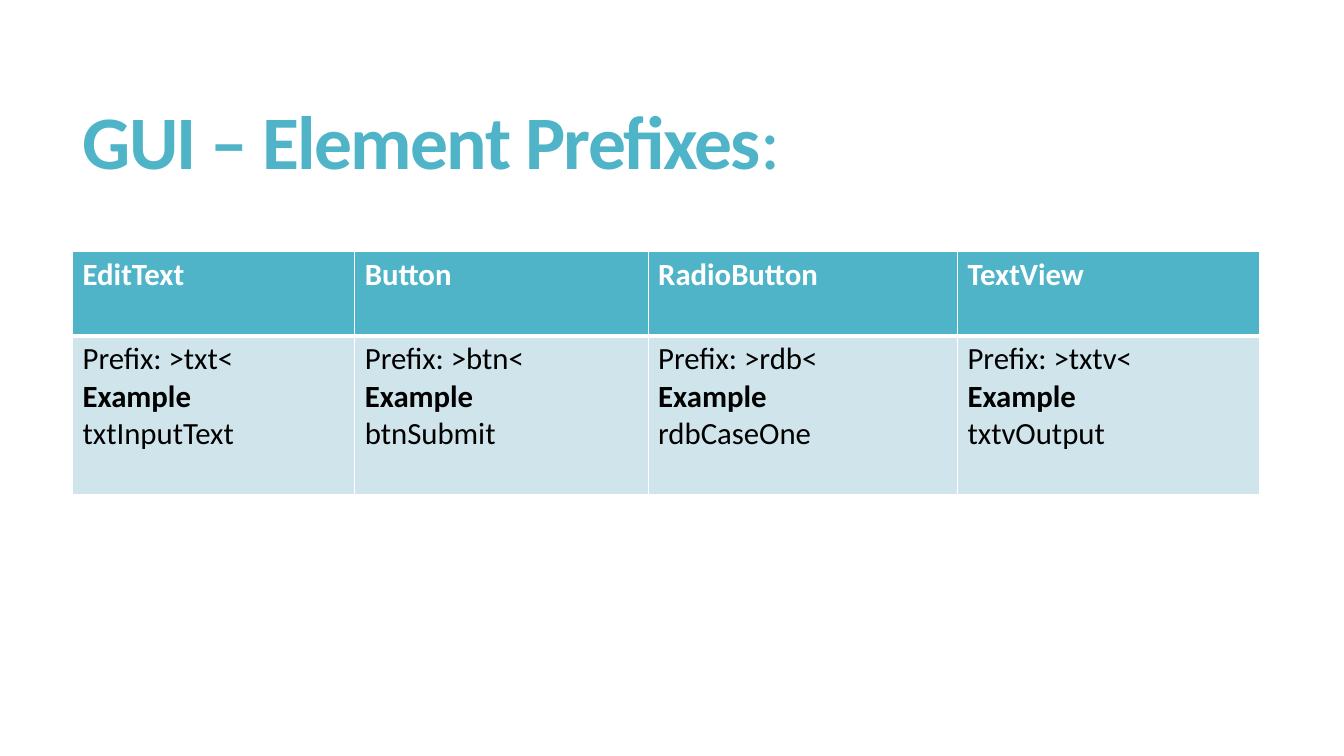
from dataclasses import dataclass

from lxml import etree
from pptx import Presentation
from pptx import util as u
from pptx.dml.color import RGBColor
from pptx.enum import text
from pptx.oxml.ns import qn

FONT = "Calibri"
TEAL = "50B4C8"
PALE = "D0E5EB"
WHITE = "FFFFFF"
BLACK = "000000"
LEFT, WIDTH = 51.84, 848.16
ROW_HEIGHTS = (60.5, 113.5)


@dataclass(frozen=True)
class Element:
    name: str
    prefix: str
    example: str
    width: float


ELEMENTS = (
    Element("EditText", "txt", "txtInputText", 201.6),
    Element("Button", "btn", "btnSubmit", 209.52),
    Element("RadioButton", "rdb", "rdbCaseOne", 221.04),
    Element("TextView", "txtv", "txtvOutput", 216),
)


def rgb(value: str) -> RGBColor:
    return RGBColor.from_string(value)


def set_font(font, size: float, color: str, bold: bool) -> None:
    font.name = FONT
    font.size = u.Pt(size)
    font.bold = bold
    font.color.rgb = rgb(color)


def add_title(slide) -> None:
    sp = slide.shapes.title
    sp.left, sp.top = u.Pt(LEFT), u.Pt(39.6)
    sp.width, sp.height = u.Pt(WIDTH), u.Pt(130.32)
    tf = sp.text_frame
    tf.word_wrap = True
    tf.auto_size = text.MSO_AUTO_SIZE.NONE
    tf.vertical_anchor = text.MSO_ANCHOR.MIDDLE
    p = tf.paragraphs[0]
    p.alignment = text.PP_ALIGN.LEFT
    p.line_spacing = 0.85
    for wording, bold in (("GUI – Element Prefixes", True), (":", False)):
        r = p.add_run()
        r.text = wording
        set_font(r.font, 54, TEAL, bold)
        r.font._element.set("spc", "-120")


def set_borders(cell, top: float, bottom: float) -> None:
    tc_pr = cell._tc.get_or_add_tcPr()
    for side, width in (("L", 1), ("R", 1), ("T", top), ("B", bottom)):
        line = etree.SubElement(tc_pr, qn(f"a:ln{side}"), w=str(u.Pt(width)))
        fill = etree.SubElement(line, qn("a:solidFill"))
        etree.SubElement(fill, qn("a:srgbClr"), val=WHITE)


def fill_cell(cell, lines: list[tuple[str, bool]], fill: str, color: str) -> None:
    cell.fill.solid()
    cell.fill.fore_color.rgb = rgb(fill)
    tf = cell.text_frame
    tf.text = "\n".join(wording for wording, _ in lines)
    for p, (_, bold) in zip(tf.paragraphs, lines):
        set_font(p.font, 22, color, bold)


def add_prefix_table(slide) -> None:
    table = slide.shapes.add_table(
        2, len(ELEMENTS), u.Pt(LEFT), u.Pt(179.28), u.Pt(WIDTH), u.Pt(sum(ROW_HEIGHTS))
    ).table
    table.horz_banding = False
    for row, height in zip(table.rows, ROW_HEIGHTS):
        row.height = u.Pt(height)
    for i, element in enumerate(ELEMENTS):
        table.columns[i].width = u.Pt(element.width)
        header, body = table.cell(0, i), table.cell(1, i)
        set_borders(header, 1, 3)
        set_borders(body, 3, 1)
        fill_cell(header, [(element.name, True)], TEAL, WHITE)
        lines = [
            (f"Prefix: >{element.prefix}<", False),
            ("Example", True),
            (element.example, False),
        ]
        fill_cell(body, lines, PALE, BLACK)


def main() -> None:
    prs = Presentation()
    prs.slide_width, prs.slide_height = u.Pt(960), u.Pt(540)
    slide = prs.slides.add_slide(prs.slide_layouts[5])
    add_title(slide)
    add_prefix_table(slide)
    prs.save("out.pptx")


if __name__ == "__main__":
    main()
